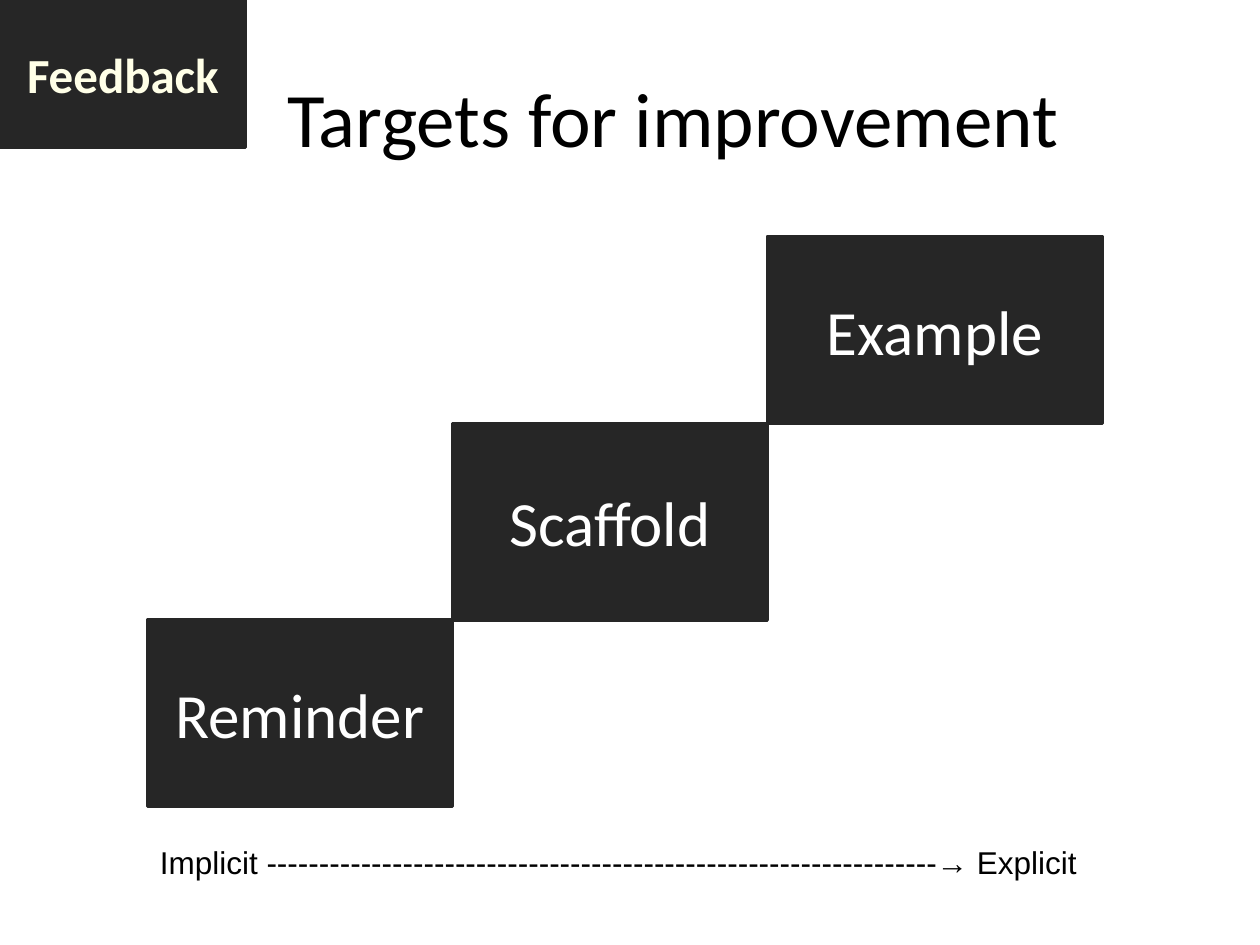
from pptx import Presentation
from pptx.dml.color import RGBColor
from pptx.enum.shapes import MSO_SHAPE
from pptx.enum.text import MSO_ANCHOR, MSO_AUTO_SIZE, PP_ALIGN
from pptx.util import Inches, Pt

DARK = "262626"
STEPS = [("Reminder", 2.42, 1.48), ("Scaffold", 2.5, 1.56), ("Example", 2.66, 1.48)]
SCALE = "Implicit ----------------------------------------------------------------→ Explicit"


def rgb(value):
    return RGBColor.from_string(value)


def write(tf, text, color, align=PP_ALIGN.CENTER, anchor=MSO_ANCHOR.MIDDLE, **font):
    tf.word_wrap = True
    tf.vertical_anchor = anchor
    p = tf.paragraphs[0]
    p.alignment = align
    r = p.add_run()
    r.text = text
    for name, value in font.items():
        setattr(r.font, name, value)
    r.font.color.rgb = rgb(color)


def add_box(s, box, text, color="FFFFFF", **font):
    sp = s.shapes.add_shape(MSO_SHAPE.RECTANGLE, *map(Inches, box))
    sp.shadow.inherit = False
    sp.fill.solid()
    sp.fill.fore_color.rgb = rgb(DARK)
    sp.line.color.rgb = rgb(DARK)
    sp.line.width = Pt(2)
    write(sp.text_frame, text, color, name="Calibri", **font)


def add_title(s, box, text):
    sp = s.shapes.title
    sp.left, sp.top, sp.width, sp.height = map(Inches, box)
    write(sp.text_frame, text, "000000", name="Calibri", size=Pt(44))


def add_staircase(s, left, bottom):
    """Place the steps corner to corner, rising to the right."""
    for text, width, height in STEPS:
        bottom -= height
        add_box(s, (left, bottom, width, height), text, size=Pt(36))
        left += width


def add_scale(s, box):
    sp = s.shapes.add_textbox(*map(Inches, box))
    write(sp.text_frame, SCALE, "000000", PP_ALIGN.LEFT, MSO_ANCHOR.TOP,
          name="Arial", size=Pt(18))
    sp.text_frame.auto_size = MSO_AUTO_SIZE.SHAPE_TO_FIT_TEXT


def main():
    prs = Presentation()
    prs.slide_width, prs.slide_height = Inches(10), Inches(7.5)
    s = prs.slides.add_slide(prs.slide_layouts[5])
    add_box(s, (0, 0, 1.95, 1.17), "Feedback", "FFFFE7", size=Pt(28), bold=True)
    add_title(s, (0.84, 0.3, 9, 1.25), "Targets for improvement")
    add_staircase(s, left=1.17, bottom=6.4)
    add_scale(s, (1.17, 6.64, 7.89, 0.4))
    prs.save("out.pptx")


if __name__ == "__main__":
    main()
